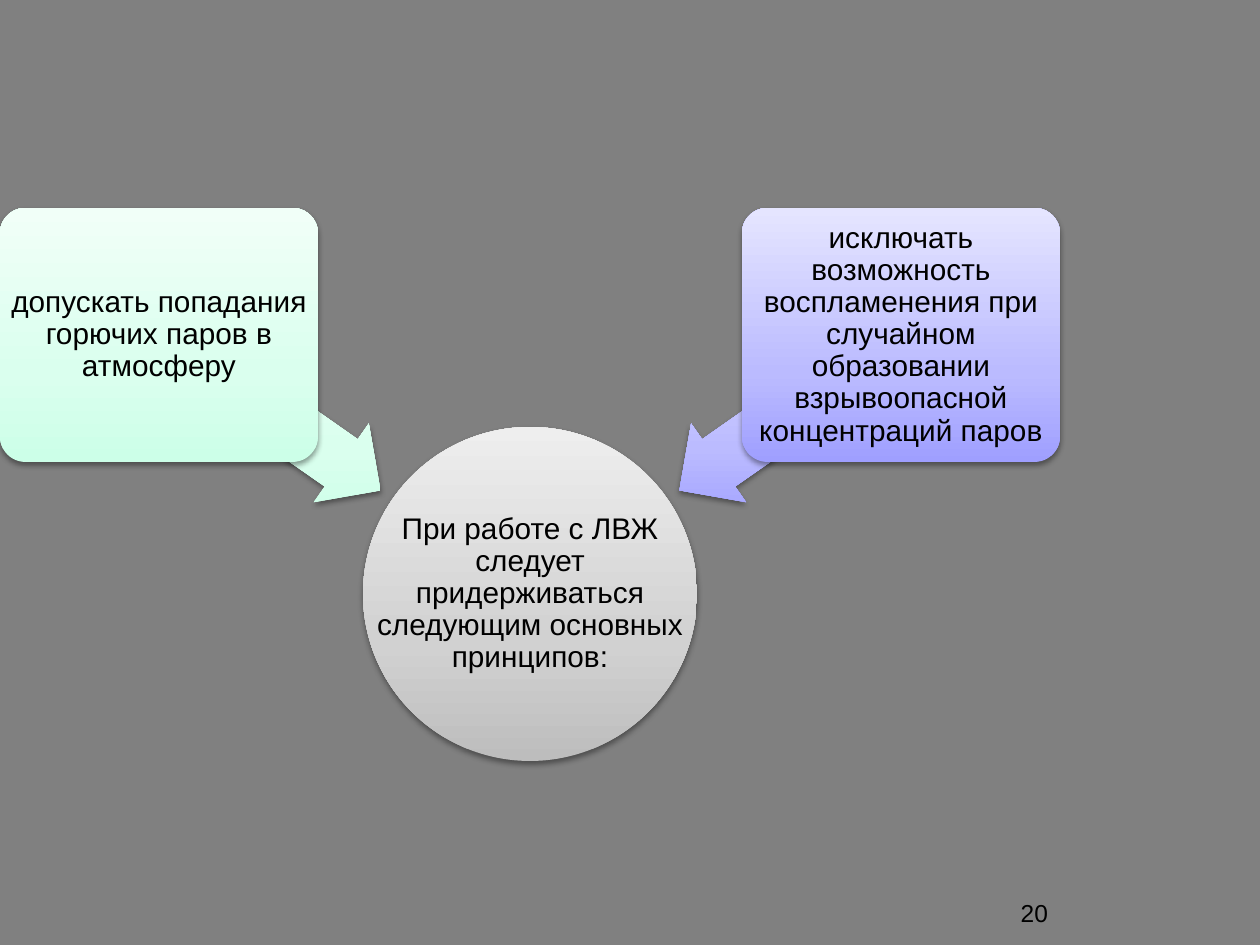
from lxml import etree
from pptx import Presentation, util as u
from pptx.dml.color import RGBColor
from pptx.enum import shapes, text
from pptx.oxml import parse_xml

PX = 914400 / 126
NS = 'xmlns:a="http://schemas.openxmlformats.org/drawingml/2006/main"'
COLORS = {
    "background": "808080",
    "text": "000000",
    "shadow": "000000",
    "gray": ("BDBDBD", "D1D1D1", "EEEEEE"),
    "green": ("CCFFE8", "DAFFEE", "F1FFF8"),
    "violet": ("9F9FFF", "BBBBFF", "E5E5FF"),
}
STOPS = (0, 35000, 100000)
CIRCLE = (363, 427, 334, 334)
BOX_TOP, BOX_W, BOX_H = 208, 318, 254
ARROW_TOP, ARROW_W, ARROW_H = 365, 270, 96
CENTER = text.PP_ALIGN.CENTER
MIDDLE = text.MSO_ANCHOR.MIDDLE
PRINCIPLES = [
    (0, 135, 215, "green", "допускать попадания горючих паров в атмосферу"),
    (742, 655, 325, "violet",
     "исключать возможность воспламенения при случайном образовании "
     "взрывоопасной концентраций паров"),
]


def emu(*lengths):
    return [u.Emu(round(n * PX)) for n in lengths]


def add_gradient_shape(s, kind, box, color, adjustments=(), rotation=0):
    sp = s.shapes.add_shape(kind, *emu(*box))
    sp.rotation = rotation
    for i, value in enumerate(adjustments):
        sp.adjustments[i] = value
    sp.line.fill.background()
    stops = "".join(
        f'<a:gs pos="{pos}"><a:srgbClr val="{c}"/></a:gs>'
        for pos, c in zip(STOPS, COLORS[color]))
    gradient = parse_xml(
        f'<a:gradFill {NS} rotWithShape="0"><a:gsLst>{stops}</a:gsLst>'
        '<a:lin ang="16200000" scaled="0"/></a:gradFill>')
    shadow = parse_xml(
        f'<a:effectLst {NS}><a:outerShdw blurRad="40000" dist="20000" '
        'dir="5400000" rotWithShape="0">'
        f'<a:srgbClr val="{COLORS["shadow"]}"><a:alpha val="38000"/></a:srgbClr>'
        '</a:outerShdw></a:effectLst>')
    props = sp.element.spPr
    props.find("{*}prstGeom").addnext(gradient)
    props.append(shadow)
    return sp


def add_text(s, box, content, size, align, anchor, insets, spacing=None):
    sp = s.shapes.add_textbox(*emu(*box))
    tf = sp.text_frame
    tf.word_wrap = True
    tf.vertical_anchor = anchor
    tf.margin_left = tf.margin_right = emu(insets[0])[0]
    tf.margin_top = tf.margin_bottom = emu(insets[1])[0]
    p = tf.paragraphs[0]
    p.text = content
    p.alignment = align
    p.line_spacing = spacing
    font = p.runs[0].font
    font.name = "Arial"
    font.size = u.Pt(size)
    font.color.rgb = RGBColor.from_string(COLORS["text"])


def add_principle(s, box_left, arrow_left, rotation, color, content):
    add_gradient_shape(s, shapes.MSO_SHAPE.LEFT_ARROW,
                       (arrow_left, ARROW_TOP, ARROW_W, ARROW_H),
                       color, (0.6, 0.5), rotation)
    box = (box_left, BOX_TOP, BOX_W, BOX_H)
    add_gradient_shape(s, shapes.MSO_SHAPE.ROUNDED_RECTANGLE, box, color, (0.1,))
    add_text(s, box, content, 17, CENTER, MIDDLE, (5, 5), 0.9)


def main():
    prs = Presentation()
    prs.slide_width, prs.slide_height = emu(1260, 945)
    s = prs.slides.add_slide(prs.slide_layouts[6])
    fill = s.background.fill
    fill.solid()
    fill.fore_color.rgb = RGBColor.from_string(COLORS["background"])

    add_gradient_shape(s, shapes.MSO_SHAPE.OVAL, CIRCLE, "gray")
    add_text(s, CIRCLE,
             "При работе с ЛВЖ следует придерживаться следующим основных принципов:",
             17, CENTER, MIDDLE, (1, 1), 0.9)
    for principle in PRINCIPLES:
        add_principle(s, *principle)
    add_text(s, (799, 892, 262, 39), "20", 14, text.PP_ALIGN.RIGHT,
             text.MSO_ANCHOR.TOP, (13, 6))
    prs.save("out.pptx")


if __name__ == "__main__":
    main()
